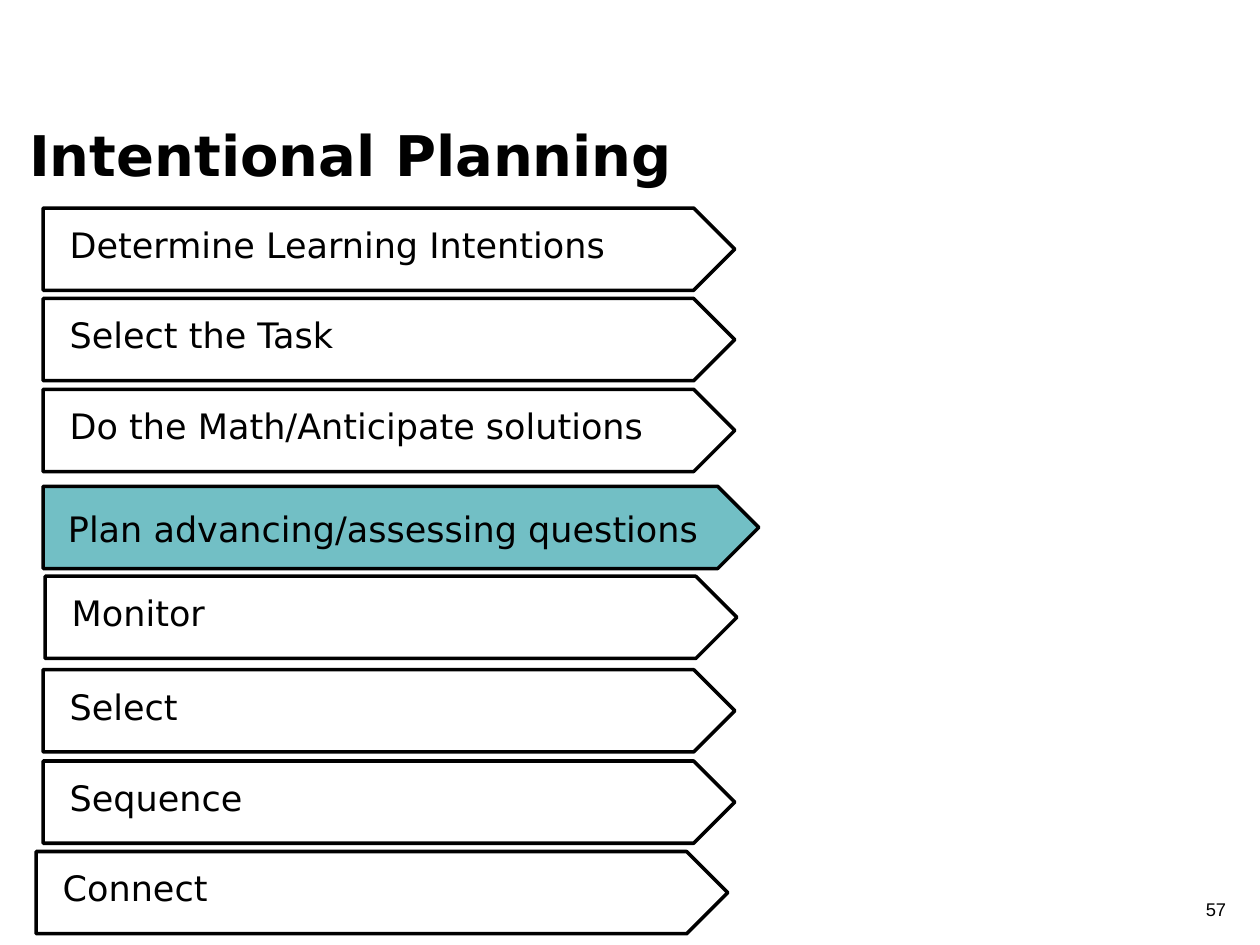
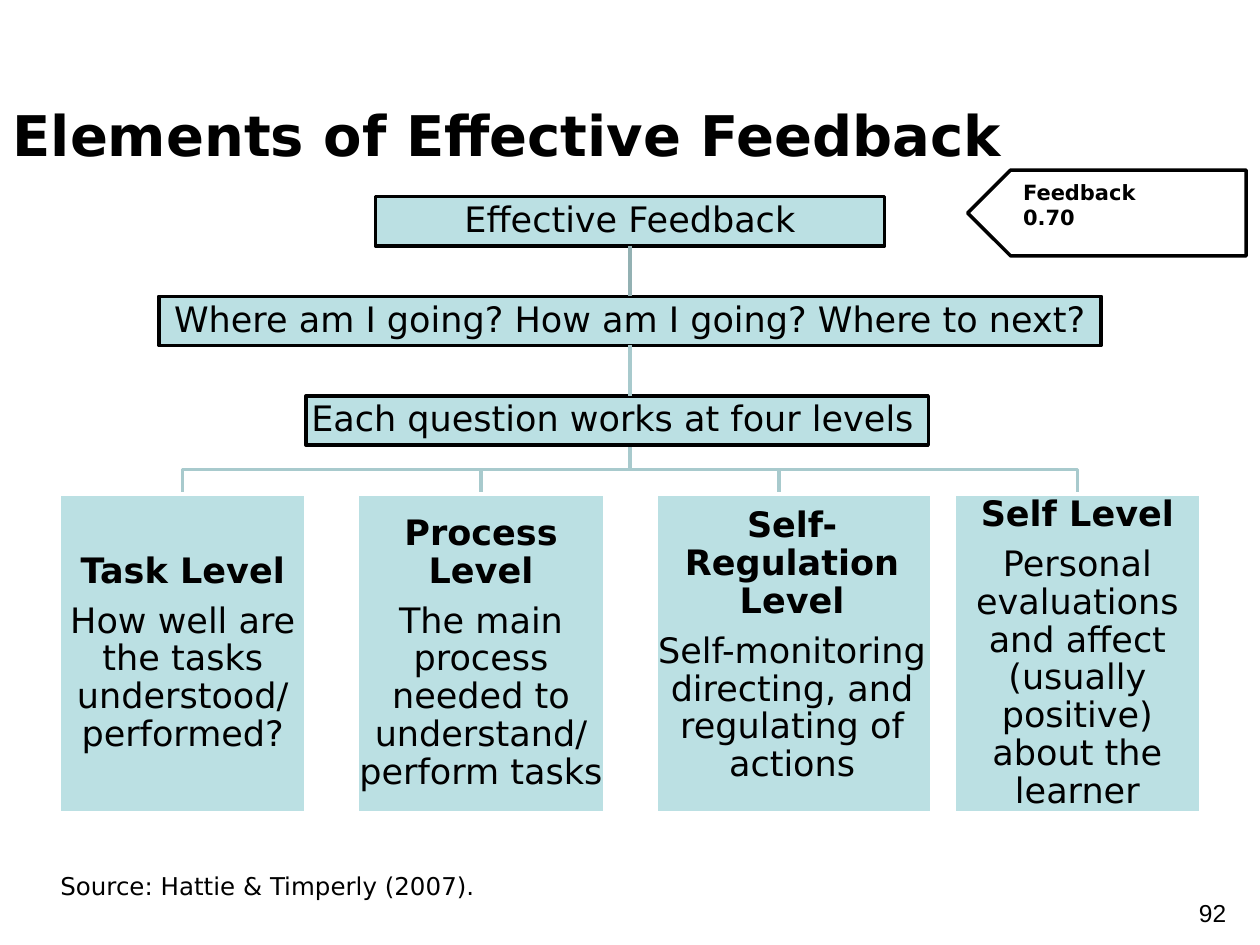
from lxml import etree
from pptx import Presentation
from pptx.dml.color import RGBColor
from pptx.enum.shapes import MSO_CONNECTOR, MSO_SHAPE
from pptx.enum.text import MSO_ANCHOR, MSO_AUTO_SIZE, PP_ALIGN
from pptx.oxml.ns import qn
from pptx.util import Pt

LEFT, CENTER, RIGHT = PP_ALIGN.LEFT, PP_ALIGN.CENTER, PP_ALIGN.RIGHT
TOP, MIDDLE = MSO_ANCHOR.TOP, MSO_ANCHOR.MIDDLE
PENTAGON, RECTANGLE = MSO_SHAPE.PENTAGON, MSO_SHAPE.RECTANGLE
STRAIGHT = MSO_CONNECTOR.STRAIGHT
NO_FIT = MSO_AUTO_SIZE.NONE
TITLE_ONLY = 5
SIDE_TOP, SIDE_BOTTOM = 0, 2

COLORS = {
    "black": "000000",
    "white": "FFFFFF",
    "highlight": "72BFC5",
    "panel": "BBE0E3",
    "trunk": "93B1B3",
    "branch": "A8CACD",
}
FONT, NUMBER_FONT = "DejaVu Sans", "Arial"
LINE_WIDTH = 2


def color(name):
    return RGBColor.from_string(COLORS[name])


class DeckBuilder:
    """Holds the shared style and the page being filled."""

    def __init__(self):
        self.deck = Presentation()
        self.deck.slide_width, self.deck.slide_height = Pt(720), Pt(540)
        self.page = None

    def add_page(self, title, place, number, number_size):
        self.page = self.deck.slides.add_slide(self.deck.slide_layouts[TITLE_ONLY])
        heading = self.page.shapes.title
        for name, value in zip(("left", "top", "width", "height"), place):
            setattr(heading, name, Pt(value))
        self.fill_text(heading, [title], size=32, bold=True, anchor=MIDDLE,
                       margins=(7.2, 7.2, 7.2, 7.2))
        self.text((540, 509.8, 167.8, 37.4), [number], size=number_size,
                  font=NUMBER_FONT, align=RIGHT)

    def fill_text(self, box, lines, size=20, bold=False, font=FONT, align=LEFT,
                  anchor=TOP, margins=(7.2, 3.6, 7.2, 3.6), line_spacing=1.0,
                  gap=0, bold_first_only=False):
        """Fill a box; margins run left, top, right, bottom."""
        frame = box.text_frame
        frame.word_wrap = True
        frame.auto_size = NO_FIT
        frame.vertical_anchor = anchor
        for side, value in zip(("left", "top", "right", "bottom"), margins):
            setattr(frame, f"margin_{side}", Pt(value))
        for index, line in enumerate(lines):
            para = frame.add_paragraph() if index else frame.paragraphs[0]
            para.alignment = align
            para.line_spacing = line_spacing
            para.space_before = Pt(gap if index else 0)
            span = para.add_run()
            span.text = line
            is_bold = bold and not (index and bold_first_only)
            formats = {"name": font, "size": Pt(size), "bold": is_bold}
            for name, value in formats.items():
                setattr(span.font, name, value)
            span.font.color.rgb = color("black")

    def text(self, place, lines, **style):
        box = self.page.shapes.add_textbox(*map(Pt, place))
        self.fill_text(box, lines, **style)

    def shape(self, kind, place, fill=None, line="black"):
        box = self.page.shapes.add_shape(kind, *map(Pt, place))
        box.shadow.inherit = False
        if fill:
            box.fill.solid()
            box.fill.fore_color.rgb = color(fill)
        else:
            box.fill.background()
        self.stroke(box, line)
        return box

    def stroke(self, item, name):
        item.line.color.rgb = color(name)
        item.line.width = Pt(LINE_WIDTH)

    def panel(self, place, lines, line="black", **style):
        box = self.shape(RECTANGLE, place, "panel", line)
        self.fill_text(box, lines, align=CENTER, anchor=MIDDLE, line_spacing=0.9,
                       **style)
        return box

    def polyline(self, points, name):
        start, *rest = [tuple(map(Pt, point)) for point in points]
        builder = self.page.shapes.build_freeform(*start)
        builder.add_line_segments(rest, close=False)
        outline = builder.convert_to_shape()
        outline.shadow.inherit = False
        outline.fill.background()
        self.stroke(outline, name)

    def link(self, x, upper, lower, name, join_lower):
        """Vertical line from the bottom of one box to the top of the next."""
        line = self.page.shapes.add_connector(
            STRAIGHT, Pt(x), upper.top + upper.height, Pt(x), lower.top)
        line.begin_connect(upper, SIDE_BOTTOM)
        if join_lower:
            line.end_connect(lower, SIDE_TOP)
        self.stroke(line, name)
        etree.SubElement(line._element.spPr, qn("a:effectLst"))


def build_planning(builder):
    builder.add_page("Intentional Planning", (9.4, 43.2, 623.5, 90), "57", 10.5)
    # Planning steps: label, left, top
    steps = [
        ("Determine Learning Intentions", 24.6, 118.9),
        ("Select the Task", 24.6, 170.6),
        ("Do the Math/Anticipate solutions", 24.6, 222.5),
        ("Plan advancing/assessing questions", 24.6, 277.9),
        ("Monitor", 25.8, 329.3),
        ("Select", 24.6, 382.7),
        ("Sequence", 24.6, 434.9),
        ("Connect", 20.6, 486.6),
    ]
    current = "Plan advancing/assessing questions"
    for label, left, top in steps:
        active = label == current
        width, fill = (409, "highlight") if active else (395.3, None)
        arrow = builder.shape(PENTAGON, (left, top, width, 47), fill)
        margins = (14.2, 12, 0, 0) if active else (15.2, 8.8, 0, 0)
        builder.fill_text(arrow, [label], margins=margins)


def build_feedback(builder):
    builder.add_page("Elements of Effective Feedback", (0, 31.7, 720, 90), "92", 14)
    middle, level_top, level_height = 360, 282.3, 182.2
    first_center, level_pitch = 104.4, 170.4

    # Branches to the four levels
    centers = [first_center + level_pitch * index for index in range(4)]
    for center in centers:
        builder.polyline([(middle, 254.2), (middle, 268.4),
                          (center, 268.4), (center, level_top)], "branch")

    # Question chain: text, left, width, right margin
    chain = [
        ("Effective Feedback", 214.6, 290.8, 0.7),
        ("Where am I going? How am I going? Where to next?", 90.7, 538.6, 0.7),
        ("Each question works at four levels", 174.8, 355.7, 5.7),
    ]
    boxes = [builder.panel((left, 112.4 + 56.9 * row, width, 28.1), [label],
                           margins=(0.7, 0.7, right, 0.7))
             for row, (label, left, width, right) in enumerate(chain)]
    builder.link(middle, boxes[0], boxes[1], "trunk", join_lower=True)
    builder.link(middle, boxes[1], boxes[2], "branch", join_lower=False)

    # Level panels: name, description, width, right and bottom margins
    levels = [
        ("Task Level", "How well are the tasks understood/ performed?", 141, 0.7, 0.7),
        ("Process Level", "The main process needed to understand/ perform tasks",
         141, 0.7, 0.7),
        ("Self-Regulation Level", "Self-monitoring directing, and regulating of actions",
         157.7, 2.7, 9.4),
        ("Self Level",
         "Personal evaluations and affect (usually positive) about the learner",
         141, 0.7, 0.7),
    ]
    for center, (name, description, width, right, bottom) in zip(centers, levels):
        builder.panel((center - 70.4, level_top, width, level_height),
                      [name, description], line="white", bold=True,
                      bold_first_only=True, gap=7, margins=(0.7, 0.7, right, bottom))

    # Source line and effect size callout
    builder.text((27.4, 493.9, 285, 25.2), ["Source: Hattie & Timperly (2007)."], size=14)
    callout = builder.shape(PENTAGON, (553, 97.2, 159.1, 49), "white")
    callout.rotation = 180
    builder.text((579.6, 99.4, 92.2, 34.6), ["Feedback", "0.70"], size=12, bold=True,
                 margins=(5, 2.9, 5, 2.9))


def main():
    builder = DeckBuilder()
    build_planning(builder)
    build_feedback(builder)
    builder.deck.save("out.pptx")


if __name__ == "__main__":
    main()
